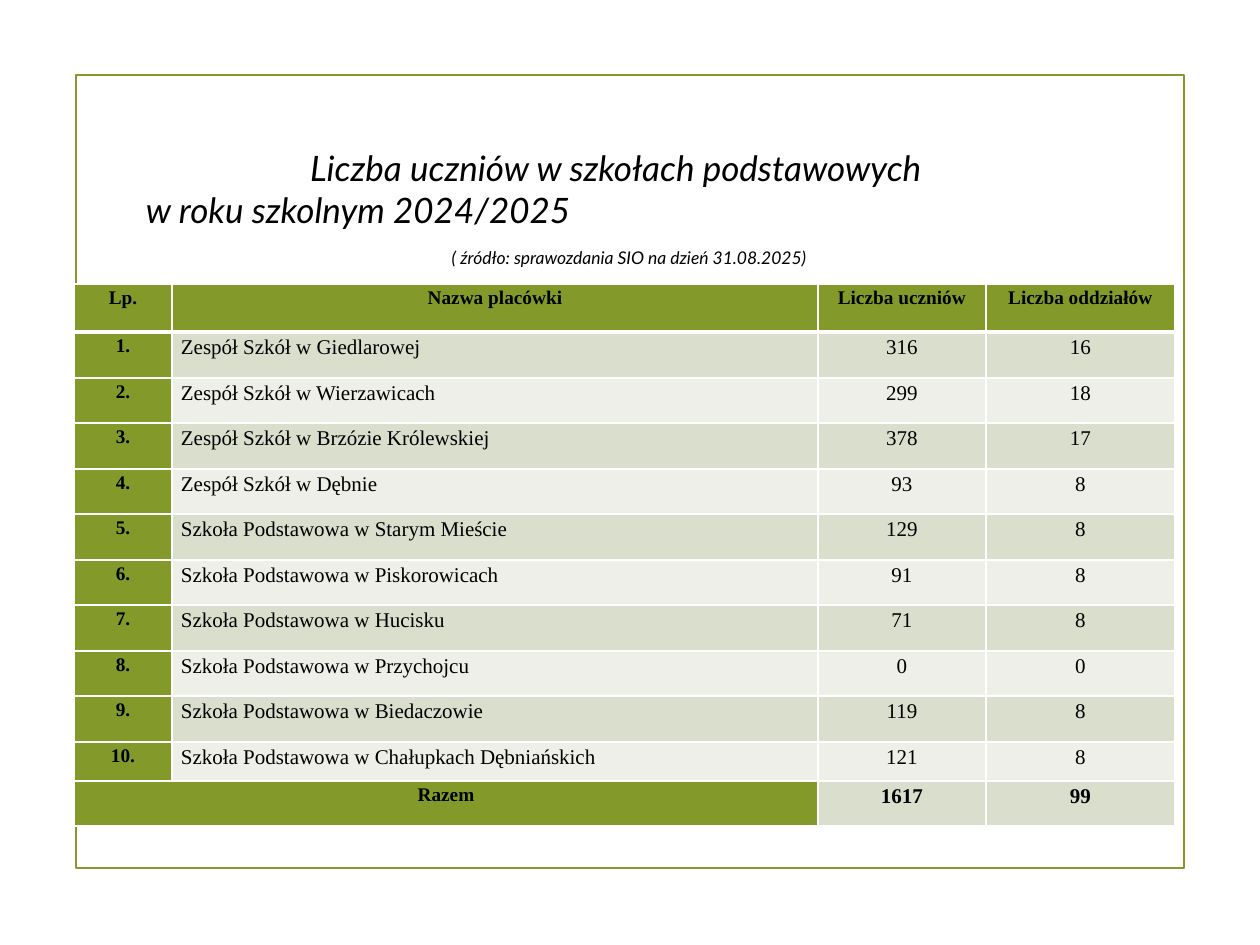
from dataclasses import dataclass

from lxml.etree import SubElement
from pptx import Presentation
from pptx.dml.color import RGBColor
from pptx.enum.shapes import MSO_SHAPE as Shape
from pptx.enum.text import MSO_ANCHOR as Anchor, MSO_AUTO_SIZE as AutoSize, PP_ALIGN as Align
from pptx.oxml.ns import qn
from pptx.util import Pt

SCALE = 914400 // 126


@dataclass(frozen=True)
class Theme:
    green: str = "83992A"
    dark_band: str = "D9DECD"
    light_band: str = "EDEFE8"
    white: str = "FFFFFF"
    black: str = "000000"
    title_font: str = "Lato"
    table_font: str = "Times New Roman"
    title_size: int = 20
    source_size: int = 10
    label_size: int = 11
    value_size: int = 12


THEME = Theme()
HEADERS = ("Lp.", "Nazwa placówki", "Liczba uczniów", "Liczba oddziałów")
SCHOOLS = [
    ("Zespół Szkół w Giedlarowej", 316, 16),
    ("Zespół Szkół w Wierzawicach", 299, 18),
    ("Zespół Szkół w Brzózie Królewskiej", 378, 17),
    ("Zespół Szkół w Dębnie", 93, 8),
    ("Szkoła Podstawowa w Starym Mieście", 129, 8),
    ("Szkoła Podstawowa w Piskorowicach", 91, 8),
    ("Szkoła Podstawowa w Hucisku", 71, 8),
    ("Szkoła Podstawowa w Przychojcu", 0, 0),
    ("Szkoła Podstawowa w Biedaczowie", 119, 8),
    ("Szkoła Podstawowa w Chałupkach Dębniańskich", 121, 8),
]
COLUMN_WIDTHS = (98, 646, 168, 189)
ROW_HEIGHTS = (48, 46, 45, 46, 45, 46, 45, 46, 45, 46, 39, 45)


def px(length):
    return length * SCALE


def write(para, text, *, font, size, bold=False, italic=False, align=Align.CENTER,
          before=0, spacing=1.0, left=0, right=0):
    properties = para._p.get_or_add_pPr()
    properties.set("marL", str(px(left)))
    properties.set("marR", str(px(right)))
    para.alignment = align
    para.line_spacing = spacing
    para.space_before = Pt(before)
    span = para.add_run()
    span.text = text
    span.font.name = font
    span.font.size = Pt(size)
    span.font.bold = bold
    span.font.italic = italic
    span.font.color.rgb = RGBColor.from_string(THEME.black)


def place_title(page, left, top, width, height):
    box = page.shapes.title
    box.left, box.top, box.width, box.height = map(px, (left, top, width, height))
    frame = box.text_frame
    frame.word_wrap = True
    frame.auto_size = AutoSize.NONE
    frame.vertical_anchor = Anchor.TOP
    frame.margin_left = frame.margin_right = frame.margin_top = frame.margin_bottom = 0
    style = dict(font=THEME.title_font, italic=True)
    write(frame.paragraphs[0], "Liczba uczniów w szkołach podstawowych",
          size=THEME.title_size, right=17, **style)
    write(frame.add_paragraph(), "w roku szkolnym 2024/2025",
          size=THEME.title_size, align=Align.LEFT, left=72, **style)
    write(frame.add_paragraph(), "( źródło: sprawozdania SIO na dzień 31.08.2025)",
          size=THEME.source_size, before=9.5, left=9, **style)


def place_frame(page, left, top, width, height):
    border = page.shapes.add_shape(Shape.RECTANGLE, *map(px, (left, top, width, height)))
    border.shadow.inherit = False
    border.fill.background()
    border.line.color.rgb = RGBColor.from_string(THEME.green)
    border.line.width = Pt(1.25)


def add_borders(cell, top, bottom):
    properties = cell._tc.get_or_add_tcPr()
    for side, points in (("L", 1), ("R", 1), ("T", top), ("B", bottom)):
        line = SubElement(properties, qn(f"a:ln{side}"), w=str(Pt(points)))
        fill = SubElement(line, qn("a:solidFill"))
        SubElement(fill, qn("a:srgbClr"), val=THEME.white)


def format_cell(cell, text, row, column, last):
    is_label = row == 0 or column == 0
    band = THEME.dark_band if row % 2 else THEME.light_band
    add_borders(cell, top=3 if row == 1 else 1, bottom=3 if row == 0 else 1)
    cell.fill.solid()
    cell.fill.fore_color.rgb = RGBColor.from_string(THEME.green if is_label else band)
    cell.margin_left = cell.margin_right = px(9)
    cell.margin_top = cell.margin_bottom = 0
    cell.vertical_anchor = Anchor.TOP
    write(cell.text_frame.paragraphs[0], text, font=THEME.table_font,
          size=THEME.label_size if is_label else THEME.value_size,
          bold=is_label or row == last, spacing=1.15,
          align=Align.LEFT if column == 1 and not is_label else Align.CENTER)


def place_table(page, left, top):
    numbered = [(f"{number}.", *school) for number, school in enumerate(SCHOOLS, 1)]
    totals = ("Razem", "", *(sum(school[field] for school in SCHOOLS) for field in (1, 2)))
    records = [HEADERS, *numbered, totals]
    last = len(records) - 1
    table = page.shapes.add_table(
        len(records), len(HEADERS), px(left), px(top),
        px(sum(COLUMN_WIDTHS)), px(sum(ROW_HEIGHTS))).table
    table.horz_banding = False
    for column, width in zip(table.columns, COLUMN_WIDTHS):
        column.width = px(width)
    for row, height in zip(table.rows, ROW_HEIGHTS):
        row.height = px(height)
    table.cell(last, 0).merge(table.cell(last, 1))
    for row, record in enumerate(records):
        for column, value in enumerate(record):
            cell = table.cell(row, column)
            if not cell.is_spanned:
                format_cell(cell, str(value), row, column, last)


def main():
    deck = Presentation()
    deck.slide_width, deck.slide_height = px(1260), px(945)
    page = deck.slides.add_slide(deck.slide_layouts[5])
    place_frame(page, 76, 75, 1108, 793)
    place_title(page, 74, 146, 1101, 126)
    place_table(page, 74, 284)
    deck.save("out.pptx")


if __name__ == "__main__":
    main()
